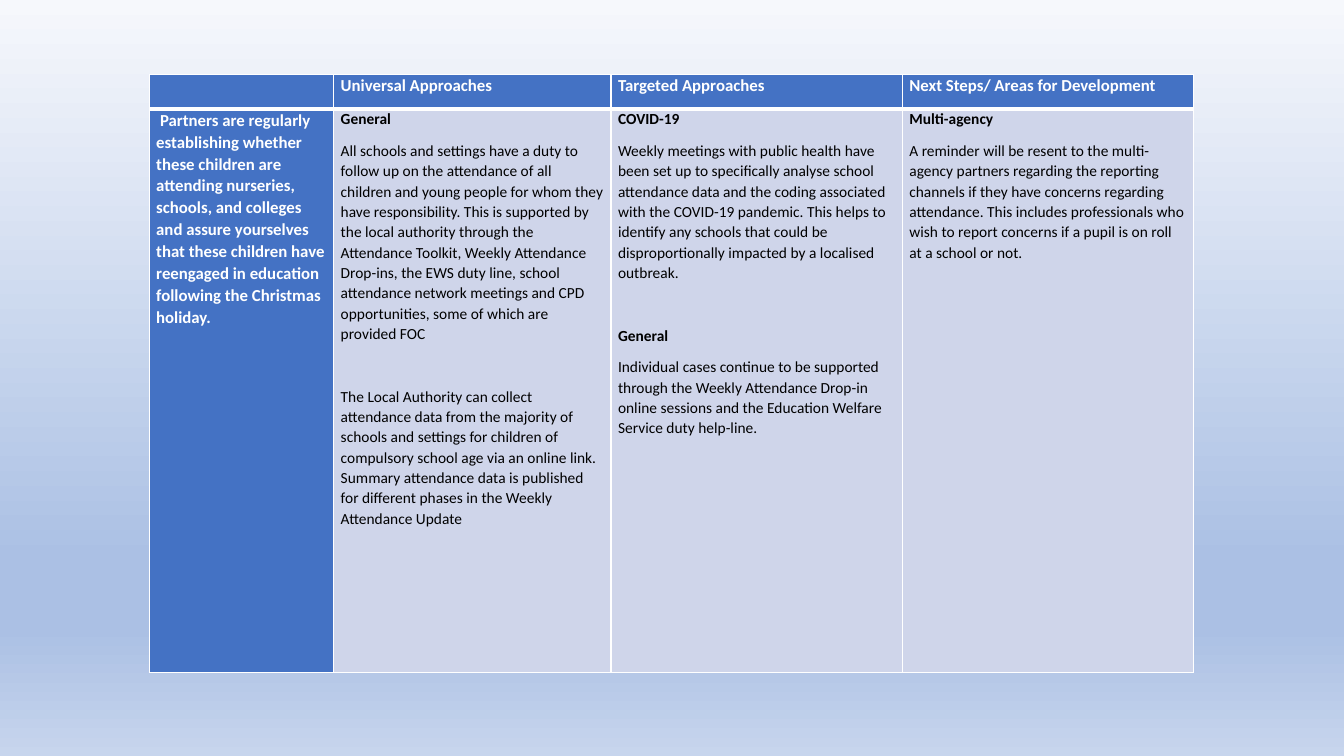
import copy
from dataclasses import dataclass

import pptx
import pptx.dml.color
import pptx.oxml
import pptx.oxml.ns
import pptx.util
from pptx.util import Inches


@dataclass(frozen=True)
class Theme:
    font: str = "Calibri"
    heading_size: int = 12
    body_size: int = 11
    white: str = "FFFFFF"
    black: str = "000000"
    strong_fill: str = "4472C4"
    pale_fill: str = "CFD5EA"
    backdrop: tuple = ((0, "F6F8FC"), (74, "ABC0E4"), (83, "ABC0E4"), (100, "C7D5ED"))
    thin: int = 1
    thick: int = 3
    line_spacing: float = 1.07
    space_after: int = 8
    section_gap: float = 22.4


THEME = Theme()
COLUMN_WIDTHS = (1.83, 2.75, 2.89, 2.89)
ROW_HEIGHTS = (0.34, 5.59)
HEADINGS = ("", "Universal Approaches", "Targeted Approaches", "Next Steps/ Areas for Development")
QUESTION = (
    " Partners are regularly establishing whether these children are attending nurseries, "
    "schools, and colleges and assure yourselves that these children have reengaged in "
    "education following the Christmas holiday."
)

# Each paragraph: text, bold, starts a new section
UNIVERSAL = (
    ("General", True, False),
    ("All schools and settings have a duty to follow up on the attendance of all children and "
     "young people for whom they have responsibility. This is supported by the local authority "
     "through the Attendance Toolkit, Weekly Attendance Drop-ins, the EWS duty line, school "
     "attendance network meetings and CPD opportunities, some of which are provided FOC",
     False, False),
    ("The Local Authority can collect attendance data from the majority of schools and settings "
     "for children of compulsory school age via an online link. Summary attendance data is "
     "published for different phases in the Weekly Attendance Update", False, True),
)
TARGETED = (
    ("COVID-19", True, False),
    ("Weekly meetings with public health have been set up to specifically analyse school "
     "attendance data and the coding associated with the COVID-19 pandemic. This helps to "
     "identify any schools that could be disproportionally impacted by a localised outbreak.",
     False, False),
    ("General", True, True),
    ("Individual cases continue to be supported through the Weekly Attendance Drop-in online "
     "sessions and the Education Welfare Service duty help-line.", False, False),
)
NEXT_STEPS = (
    ("Multi-agency", True, False),
    ("A reminder will be resent to the multi-agency partners regarding the reporting channels if "
     "they have concerns regarding attendance. This includes professionals who wish to report "
     "concerns if a pupil is on roll at a school or not.", False, False),
)


def rgb(value):
    return pptx.dml.color.RGBColor.from_string(value)


def paint_background(slide):
    fill = slide.background.fill
    fill.gradient()
    fill.gradient_angle = 270
    stops = slide.element.find(".//" + pptx.oxml.ns.qn("a:gsLst"))
    for _ in range(len(THEME.backdrop) - len(stops)):
        stops.append(copy.deepcopy(stops[0]))
    for stop, (percent, colour) in zip(fill.gradient_stops, THEME.backdrop):
        stop.position = percent / 100
        stop.color.rgb = rgb(colour)


def set_borders(cell, top, bottom):
    """Draw white cell borders, with widths in points for top and bottom."""
    widths = {"L": THEME.thin, "R": THEME.thin, "T": top, "B": bottom}
    properties = cell._tc.get_or_add_tcPr()
    for index, (side, width) in enumerate(widths.items()):
        properties.insert(index, pptx.oxml.parse_xml(
            f'<a:ln{side} {pptx.oxml.ns.nsdecls("a")} w="{pptx.util.Pt(width)}"><a:solidFill>'
            f'<a:srgbClr val="{THEME.white}"/></a:solidFill></a:ln{side}>'
        ))


def write_paragraph(paragraph, text, size, colour, bold, new_section):
    spacing = {
        "line_spacing": THEME.line_spacing,
        "space_before": pptx.util.Pt(THEME.section_gap if new_section else 0),
        "space_after": pptx.util.Pt(THEME.space_after),
    }
    for name, value in spacing.items():
        setattr(paragraph, name, value)
    if text:
        paragraph.add_run().text = text
    for font in [paragraph.font] + [run.font for run in paragraph.runs]:
        for name, value in {"name": THEME.font, "size": pptx.util.Pt(size), "bold": bold}.items():
            setattr(font, name, value)
        font.color.rgb = rgb(colour)


def fill_cell(cell, paragraphs, fill, size, colour):
    margins = {"margin_left": 0.07, "margin_right": 0.07, "margin_top": 0, "margin_bottom": 0}
    for name, value in margins.items():
        setattr(cell, name, Inches(value))
    cell.fill.solid()
    cell.fill.fore_color.rgb = rgb(fill)
    frame = cell.text_frame
    for index, (text, bold, new_section) in enumerate(paragraphs):
        paragraph = frame.add_paragraph() if index else frame.paragraphs[0]
        write_paragraph(paragraph, text, size, colour, bold, new_section)


def add_approaches_table(slide):
    table = slide.shapes.add_table(
        len(ROW_HEIGHTS), len(COLUMN_WIDTHS), Inches(1.48), Inches(0.74),
        Inches(sum(COLUMN_WIDTHS)), Inches(sum(ROW_HEIGHTS)),
    ).table
    for column, width in zip(table.columns, COLUMN_WIDTHS):
        column.width = Inches(width)
    for row, height in zip(table.rows, ROW_HEIGHTS):
        row.height = Inches(height)

    strong = (THEME.strong_fill, THEME.heading_size, THEME.white)
    pale = (THEME.pale_fill, THEME.body_size, THEME.black)
    for index, heading in enumerate(HEADINGS):
        fill_cell(table.cell(0, index), ((heading, True, False),), *strong)
    fill_cell(table.cell(1, 0), ((QUESTION, True, False),), *strong)
    for index, approach in enumerate((UNIVERSAL, TARGETED, NEXT_STEPS), start=1):
        fill_cell(table.cell(1, index), approach, *pale)

    for index in range(len(COLUMN_WIDTHS)):
        set_borders(table.cell(0, index), THEME.thin, THEME.thick)
        set_borders(table.cell(1, index), THEME.thick, THEME.thin)


def main():
    deck = pptx.Presentation()
    deck.slide_width = Inches(13.33)
    deck.slide_height = Inches(7.5)
    slide = deck.slides.add_slide(deck.slide_layouts[6])
    paint_background(slide)
    add_approaches_table(slide)
    deck.save("out.pptx")


if __name__ == "__main__":
    main()
